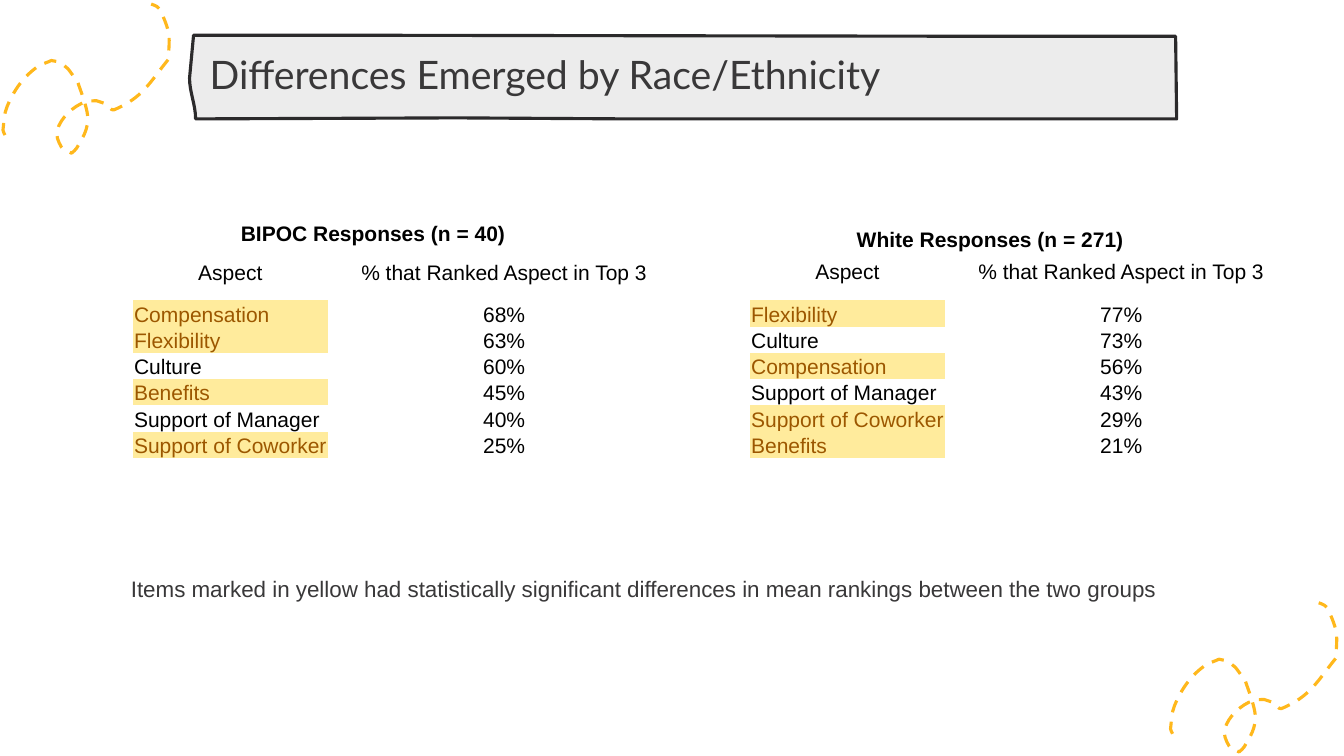
from lxml.etree import SubElement
from pptx import Presentation
from pptx.dml.color import RGBColor
from pptx.enum.dml import MSO_LINE
from pptx.enum.text import MSO_ANCHOR as Anchor, PP_ALIGN as Align
from pptx.oxml.ns import qn
from pptx.util import Inches, Pt

WHITE = RGBColor(0xFF, 0xFF, 0xFF)
BLACK = RGBColor(0, 0, 0)
GOLD = RGBColor(0xFF, 0xB8, 0x1C)
GRAY = RGBColor(0xEC, 0xEC, 0xEC)
INK = RGBColor(0x2B, 0x2A, 0x2B)
TEXT = RGBColor(0x39, 0x38, 0x39)
YELLOW = RGBColor(0xFF, 0xEB, 0x9C)
BROWN = RGBColor(0x9C, 0x57, 0x00)

NO_GRID_STYLE = "{2D5ABB26-0587-4C30-8999-92F81FD0307C}"
COLUMNS = (0.67, 1.93, 3.5)
ASPECT_HEIGHT = 0.4
BOTTOM = 4.51
SIGNIFICANT = {"Compensation", "Flexibility", "Benefits", "Support of Coworker"}

SWIRL_SIZE = (164, 148)
SWIRL = [
    (2, 130), (1, 128), (0, 126), (0, 125), (1, 117), (1, 109), (4, 102),
    (11, 85), (21, 71), (36, 61), (40, 59), (44, 58), (48, 56),
    (50, 56), (51, 56), (53, 57), (66, 63), (63, 63), (74, 77),
    (77, 86), (83, 101), (84, 111), (85, 124), (79, 133), (73, 143),
    (72, 145), (70, 146), (68, 148), (65, 146), (60, 146), (58, 142),
    (55, 137), (52, 130), (54, 125), (57, 113), (70, 101), (82, 97),
    (85, 96), (89, 96), (93, 96), (96, 97), (99, 98), (102, 99),
    (105, 101), (107, 106), (110, 105), (139, 93), (146, 77), (164, 55),
    (165, 32), (167, 31), (157, 8), (154, 2), (152, 2), (147, 0),
]
BANNER_SIZE = (979, 82)
BANNER_EDGE = [(4, 0), (165, 0), (761, 1), (978, 1), (979, 82),
               (830, 82), (435, 82), (264, 81), (6, 82)]
BANNER_CURVE = [(6, 68), (0, 56), (0, 42)]


def bend_segments(shape, straight):
    """Turn the segments after the straight ones into cubic curves."""
    lines = list(shape._element.iter(qn("a:lnTo")))[straight:]
    for first, second, third in zip(lines[::3], lines[1::3], lines[2::3]):
        first.tag = qn("a:cubicBezTo")
        for line in (second, third):
            first.append(line[0])
            line.getparent().remove(line)


def add_outline(page, box, size, points, straight, color, close):
    """Draw an outline whose design size is scaled to the box."""
    left, top, width, height = box
    scale = (Inches(width) / size[0], Inches(height) / size[1])
    builder = page.shapes.build_freeform(*points[0], scale=scale)
    builder.add_line_segments(points[1:], close=close)
    shape = builder.convert_to_shape(Inches(left), Inches(top))
    bend_segments(shape, straight)
    shape.shadow.inherit = False
    shape.line.color.rgb = color
    shape.line.width = Pt(2.25)
    return shape


def add_swirl(page, box):
    """Draw a dashed looping swirl in the box."""
    swirl = add_outline(page, box, SWIRL_SIZE, SWIRL, 0, GOLD, False)
    swirl.fill.background()
    swirl.line.dash_style = MSO_LINE.DASH


def write(frame, text, size, color, font="Arial", align=Align.LEFT, bold=False):
    """Put one formatted paragraph in a text frame."""
    frame.text = text
    para = frame.paragraphs[0]
    para.alignment = align
    for span in para.runs:
        span.font.name = font
        span.font.size = Pt(size)
        span.font.bold = bold
        span.font.color.rgb = color
    return para


def add_banner(page, box, title):
    """Draw the uneven title banner."""
    points = BANNER_EDGE + BANNER_CURVE
    banner = add_outline(page, box, BANNER_SIZE, points, len(BANNER_EDGE) - 1, INK, True)
    banner.fill.solid()
    banner.fill.fore_color.rgb = GRAY
    frame = banner.text_frame
    frame.word_wrap = True
    frame.vertical_anchor = Anchor.MIDDLE
    frame.margin_left = frame.margin_right = Inches(0.2)
    frame.margin_top = frame.margin_bottom = Inches(0.2)
    write(frame, title, 28, TEXT, "Lato").line_spacing = 0.9


def fill_cell(cell, text="", align=Align.CENTER, bold=False, marked=False, anchor=Anchor.TOP):
    """Fill and write one table cell."""
    cell.fill.solid()
    cell.fill.fore_color.rgb = YELLOW if marked else WHITE
    cell.margin_left = cell.margin_right = cell.margin_top = Inches(0.01)
    cell.margin_bottom = 0
    cell.vertical_anchor = anchor
    para = write(cell.text_frame, text, 15, BROWN if marked else BLACK, align=align, bold=bold)
    if not text:
        ending = SubElement(para._p, qn("a:endParaRPr"), sz="1500")
        SubElement(ending, qn("a:latin"), typeface="Arial")


def add_ranking(page, box, heading, heading_height, rankings):
    """Draw a ranking table with a merged heading row."""
    left, top, width, height = map(Inches, box)
    graphic = page.shapes.add_table(len(rankings) + 2, len(COLUMNS), left, top, width, height)
    table = graphic.table
    table.first_row = table.horz_banding = False
    table._tbl.tblPr.find(qn("a:tableStyleId")).text = NO_GRID_STYLE
    for column, share in zip(table.columns, COLUMNS):
        column.width = Inches(share)
    row_height = (box[3] - heading_height - ASPECT_HEIGHT) / len(rankings)
    heights = [heading_height, ASPECT_HEIGHT] + [row_height] * len(rankings)
    for row, length in zip(table.rows, heights):
        row.height = Inches(length)

    table.cell(0, 0).merge(table.cell(0, 2))
    fill_cell(table.cell(0, 0), heading, bold=True)
    for column, label in enumerate(("", "Aspect", "% that Ranked Aspect in Top 3")):
        fill_cell(table.cell(1, column), label)
    for row, (aspect, percent) in enumerate(rankings, 2):
        fill_cell(table.cell(row, 0))
        fill_cell(table.cell(row, 1), aspect, Align.LEFT,
                  marked=aspect in SIGNIFICANT, anchor=Anchor.BOTTOM)
        fill_cell(table.cell(row, 2), f"{percent}%", anchor=Anchor.BOTTOM)


def add_note(page, box, text):
    """Write the note below the tables."""
    frame = page.shapes.add_textbox(*map(Inches, box)).text_frame
    frame.word_wrap = True
    write(frame, text, 16, TEXT)


def main():
    """Build and save the slide."""
    deck = Presentation()
    deck.slide_width, deck.slide_height = Inches(13.33), Inches(7.5)
    page = deck.slides.add_slide(deck.slide_layouts[6])
    for left, top in ((0.03, 0.04), (11.61, 5.98)):
        add_swirl(page, (left, top, 1.64, 1.48))
    add_banner(page, (1.88, 0.35, 9.79, 0.83), "Differences Emerged by Race/Ethnicity")
    add_note(page, (1.2, 5.66, 11.87, 0.37),
             "Items marked in yellow had statistically significant differences "
             "in mean rankings between the two groups")
    add_ranking(page, (0.65, 2.2, sum(COLUMNS), BOTTOM - 2.2), "BIPOC Responses (n = 40)", 0.38, [
        ("Compensation", 68), ("Flexibility", 63), ("Culture", 60),
        ("Benefits", 45), ("Support of Manager", 40), ("Support of Coworker", 25)])
    add_ranking(page, (6.77, 2.26, sum(COLUMNS), BOTTOM - 2.26), "White Responses (n = 271)", 0.32, [
        ("Flexibility", 77), ("Culture", 73), ("Compensation", 56),
        ("Support of Manager", 43), ("Support of Coworker", 29), ("Benefits", 21)])
    deck.save("out.pptx")


if __name__ == "__main__":
    main()
